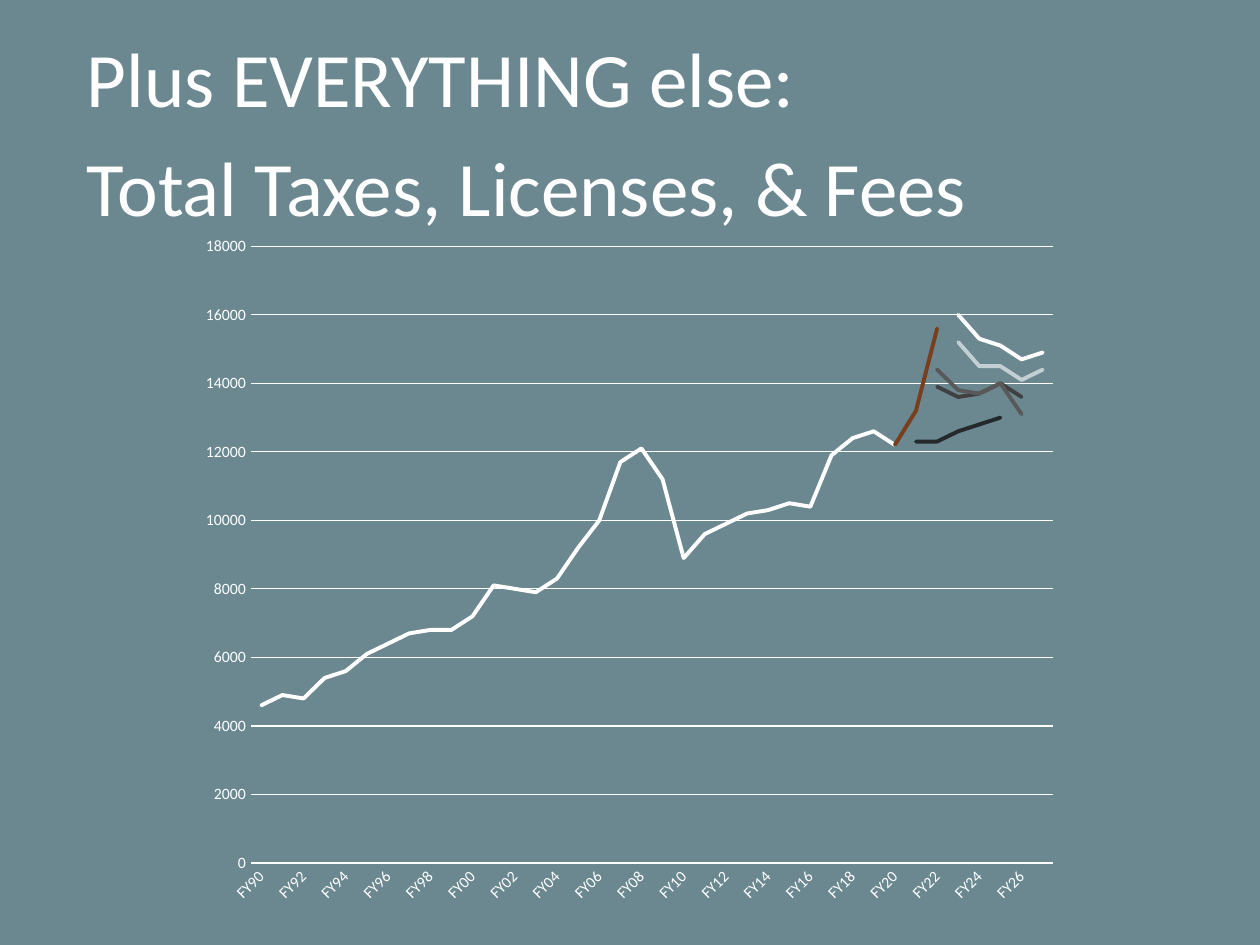
"""Build a slide with a line chart of total taxes, licenses and fees by fiscal year."""
from dataclasses import dataclass

from lxml.etree import SubElement
from pptx import Presentation
from pptx.chart.data import CategoryChartData
from pptx.dml.color import RGBColor
from pptx.enum.chart import XL_CHART_TYPE as ChartType, XL_TICK_MARK as TickMark
from pptx.oxml.ns import qn
from pptx.util import Inches, Pt

COLORS = {
    "background": "6B8891",
    "white": "FFFFFF",
    "charcoal": "404040",
    "ink": "25292B",
    "gray": "595959",
    "rust": "793E1D",
    "mist": "C3CFD3",
}
FONT = "Calibri"
YEARS = [f"FY{year % 100:02d}" for year in range(1990, 2028)]
PLOT_AREA = {"x": 0.07, "y": 0.03, "w": 0.91, "h": 0.89}


@dataclass
class Trend:
    start: str
    values: list[int]
    color: str = "white"

    def across_years(self) -> list[int | None]:
        before = YEARS.index(self.start)
        after = len(YEARS) - before - len(self.values)
        return [None] * before + self.values + [None] * after


TRENDS = [
    Trend("FY90", [4600, 4900, 4800, 5400, 5600, 6100, 6400, 6700, 6800, 6800,
                   7200, 8100, 8000, 7900, 8300, 9200]),
    Trend("FY05", [9200, 10000, 11700, 12100]),
    Trend("FY08", [12100, 11200, 8900]),
    Trend("FY10", [8900, 9600, 9900, 10200, 10300, 10500, 10400]),
    Trend("FY16", [10400, 11900, 12400, 12600, 12200]),
    Trend("FY22", [13900, 13600, 13700, 14000, 13600], "charcoal"),
    Trend("FY21", [12300, 12300, 12600, 12800, 13000], "ink"),
    Trend("FY22", [14400, 13800, 13700, 14000, 13100], "gray"),
    Trend("FY20", [12200, 13200, 15600], "rust"),
    Trend("FY23", [15200, 14500, 14500, 14100, 14400], "mist"),
    Trend("FY23", [16000, 15300, 15100, 14700, 14900]),
]


def rgb(name: str) -> RGBColor:
    return RGBColor.from_string(COLORS[name])


def style_font(font, size: float, color: str = "white") -> None:
    font.name, font.size, font.bold = FONT, Pt(size), False
    font.color.rgb = rgb(color)


def style_line(line, width: float, color: str = "white") -> None:
    line.color.rgb = rgb(color)
    line.width = Pt(width)


def add_text(slide, text: str, *, left: float, top: float, width: float,
             height: float, size: float, space_before: float) -> None:
    box = slide.shapes.add_textbox(Inches(left), Inches(top), Inches(width), Inches(height))
    frame = box.text_frame
    frame.word_wrap = True
    frame.text = text
    for paragraph in frame.paragraphs:
        paragraph.space_before = Pt(space_before)
        style_font(paragraph.runs[0].font, size)


def fix_plot_area(chart) -> None:
    plot_area = chart.plots[0]._element.getparent()
    for automatic in plot_area.findall(qn("c:layout")):
        plot_area.remove(automatic)
    layout = SubElement(plot_area, qn("c:layout"))
    plot_area.insert(0, layout)
    manual = SubElement(layout, qn("c:manualLayout"))
    settings = {"layoutTarget": "inner", "xMode": "edge", "yMode": "edge", **PLOT_AREA}
    for tag, value in settings.items():
        SubElement(manual, qn(f"c:{tag}")).set("val", str(value))


def style_axes(chart) -> None:
    years, amounts = chart.category_axis, chart.value_axis
    for axis in (years, amounts):
        axis.major_tick_mark = axis.minor_tick_mark = TickMark.NONE
        style_font(axis.tick_labels.font, 9)
    style_line(years.format.line, 0.75)
    years._element.find(qn("c:txPr")).find(qn("a:bodyPr")).set("rot", "-2700000")
    skip = SubElement(years._element, qn("c:tickLblSkip"))
    skip.set("val", "2")
    years._element.find(qn("c:noMultiLvlLbl")).addprevious(skip)
    amounts.minimum_scale, amounts.maximum_scale, amounts.major_unit = 0, 18000, 2000
    amounts.format.line.fill.background()
    style_line(amounts.major_gridlines.format.line, 0.75)


def add_revenue_chart(slide, trends: list[Trend]) -> None:
    data = CategoryChartData(number_format="0")
    data.categories = YEARS
    for number, trend in enumerate(trends, 1):
        data.add_series(f"Series {number}", trend.across_years())
    chart = slide.shapes.add_chart(ChartType.LINE, Inches(1.5), Inches(1.79),
                                   Inches(7), Inches(5.5), data).chart
    chart.has_legend = chart.has_title = False
    style_font(chart.font, 10)
    chart.plots[0].vary_by_categories = False
    for series, trend in zip(chart.plots[0].series, trends):
        series.smooth = False
        style_line(series.format.line, 2.25, trend.color)
        series.format.line._ln.set("cap", "rnd")
    style_axes(chart)
    fix_plot_area(chart)


def main() -> None:
    deck = Presentation()
    deck.slide_width, deck.slide_height = Inches(10), Inches(7.5)
    slide = deck.slides.add_slide(deck.slide_layouts[6])
    slide.background.fill.solid()
    slide.background.fill.fore_color.rgb = rgb("background")
    add_text(slide, "Plus EVERYTHING else:\nTotal Taxes, Licenses, & Fees",
             left=0.59, top=0.19, width=8.82, height=0.93, size=44, space_before=10)
    add_revenue_chart(slide, TRENDS)
    deck.save("out.pptx")


if __name__ == "__main__":
    main()
